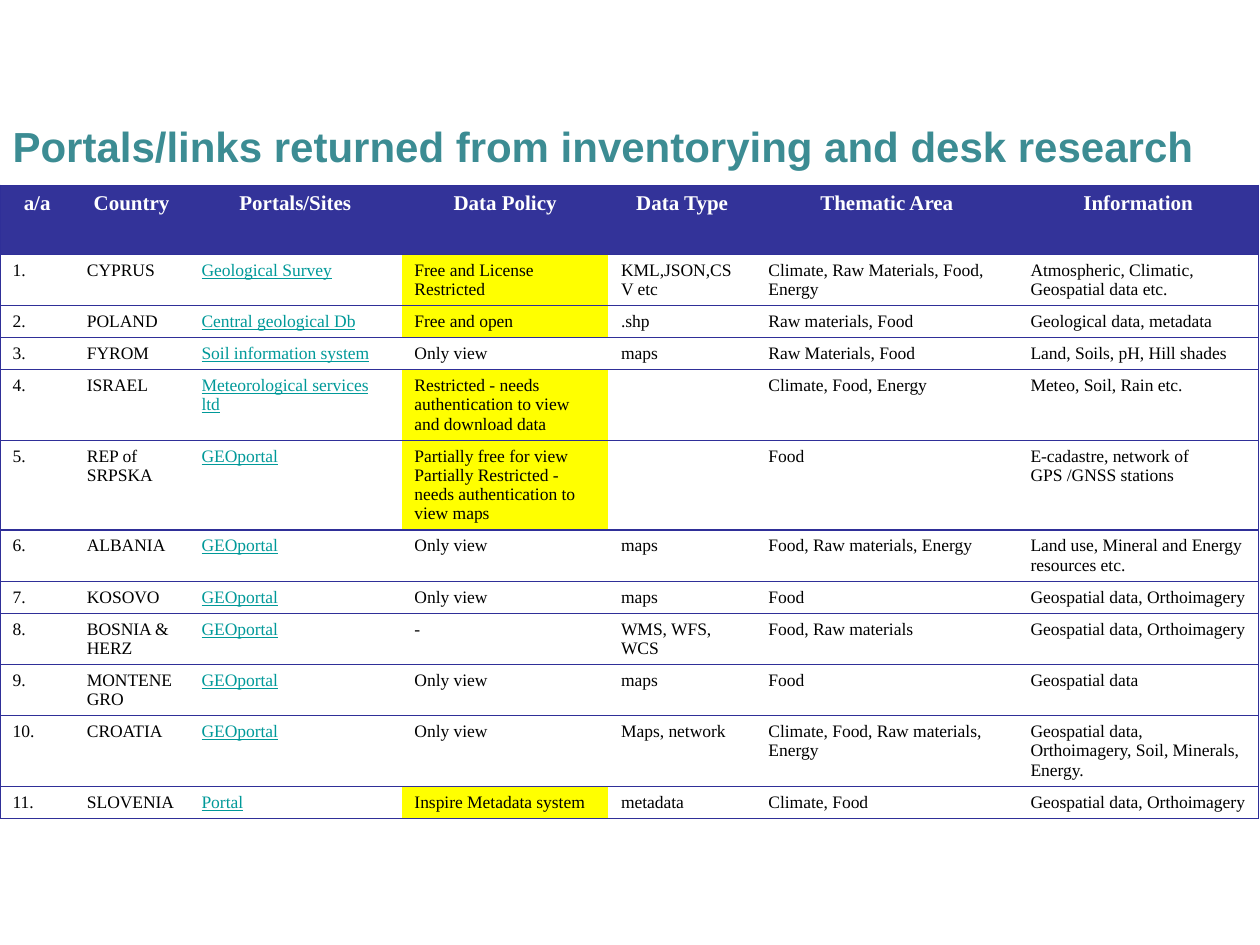
from lxml.etree import SubElement
from pptx import Presentation
from pptx.dml.color import RGBColor
from pptx.enum.text import MSO_ANCHOR as Anchor, MSO_AUTO_SIZE as AutoSize, PP_ALIGN as Align
from pptx.oxml.ns import qn
from pptx.util import Inches, Pt

TITLE = "Portals/links returned from inventorying and desk research"
HEADINGS = ["a/a", "Country", "Portals/Sites", "Data Policy", "Data Type", "Thematic Area", "Information"]
COUNTRIES = [
    ("CYPRUS", "Geological Survey", "Free and License Restricted", "KML,JSON,CSV etc",
     "Climate, Raw Materials, Food, Energy", "Atmospheric, Climatic, Geospatial data etc."),
    ("POLAND", "Central geological Db", "Free and open", ".shp",
     "Raw materials, Food", "Geological data, metadata"),
    ("FYROM", "Soil information system", "Only view", "maps",
     "Raw Materials, Food", "Land, Soils, pH, Hill shades"),
    ("ISRAEL", "Meteorological services ltd",
     "Restricted - needs authentication to view and download data", "",
     "Climate, Food, Energy", "Meteo, Soil, Rain etc."),
    ("REP of SRPSKA", "GEOportal",
     "Partially free for view Partially Restricted - needs authentication to view maps", "",
     "Food", "E-cadastre, network of GPS /GNSS stations"),
    ("ALBANIA", "GEOportal", "Only view", "maps",
     "Food, Raw materials, Energy", "Land use, Mineral and Energy resources etc."),
    ("KOSOVO", "GEOportal", "Only view", "maps", "Food", "Geospatial data, Orthoimagery"),
    ("BOSNIA & HERZ", "GEOportal", "-", "WMS, WFS, WCS",
     "Food, Raw materials", "Geospatial data, Orthoimagery"),
    ("MONTENEGRO", "GEOportal", "Only view", "maps", "Food", "Geospatial data"),
    ("CROATIA", "GEOportal", "Only view", "Maps, network",
     "Climate, Food, Raw materials, Energy", "Geospatial data, Orthoimagery, Soil, Minerals, Energy."),
    ("SLOVENIA", "Portal", "Inspire Metadata system", "metadata",
     "Climate, Food", "Geospatial data, Orthoimagery"),
]
COLUMN_WIDTHS = [0.59, 0.91, 1.69, 1.64, 1.17, 2.08, 1.91]
HEADER_HEIGHT, ROW_HEIGHT = 0.55, 0.22
PORTAL, POLICY = 2, 3
UNMARKED_POLICIES = {"Only view", "-"}
NAVY, RULE, TEAL, LINK = "333399", "2F2F98", "3C8C93", "009999"
YELLOW, WHITE, BLACK = "FFFF00", "FFFFFF", "000000"
PLAIN_STYLE = "{2D5ABB26-0587-4C30-8999-92F81FD0307C}"


def rgb(value):
    """Return the colour for a hex string."""
    return RGBColor.from_string(value)


def write(frame, text, font="Times New Roman", size=10, color=BLACK, bold=False,
          underline=False, align=Align.LEFT):
    """Put one formatted paragraph into a text frame."""
    paragraph = frame.paragraphs[0]
    paragraph.alignment = align
    if not text:
        return
    run = paragraph.add_run()
    run.text = text
    run.font.name, run.font.size = font, Pt(size)
    run.font.bold, run.font.underline = bold, underline
    run.font.color.rgb = rgb(color)


def add_border(cell, side):
    """Draw a thin rule on one side (L, R, T or B) of a cell."""
    line = SubElement(cell._tc.get_or_add_tcPr(), qn(f"a:ln{side}"), w=str(Pt(0.75)))
    SubElement(SubElement(line, qn("a:solidFill")), qn("a:srgbClr"), val=RULE)


def format_cell(cell, text, fill=None, sides="TB", **text_format):
    """Set the text, rules and fill of a table cell."""
    write(cell.text_frame, text, **text_format)
    for side in sides:
        add_border(cell, side)
    if fill:
        cell.fill.solid()
        cell.fill.fore_color.rgb = rgb(fill)
    else:
        cell.fill.background()


def add_title(slide):
    """Place and fill the title placeholder."""
    title = slide.shapes.title
    title.left, title.top, title.width, title.height = map(Inches, (0, 0.76, 10, 0.79))
    frame = title.text_frame
    frame.word_wrap, frame.auto_size = True, AutoSize.NONE
    frame.vertical_anchor = Anchor.MIDDLE
    write(frame, TITLE, font="Arial", size=24, color=TEAL, bold=True)


def add_portal_table(slide):
    """Add the table of portals by country."""
    holder = slide.shapes.add_table(len(COUNTRIES) + 1, len(HEADINGS),
                                    Inches(0), Inches(1.47), Inches(9.98), Inches(5.65))
    table = holder.table
    table.first_row = table.horz_banding = False
    table._tbl.tblPr.find(qn("a:tableStyleId")).text = PLAIN_STYLE
    for column, width in zip(table.columns, COLUMN_WIDTHS):
        column.width = Inches(width)
    for index, row in enumerate(table.rows):
        row.height = Inches(ROW_HEIGHT if index else HEADER_HEIGHT)

    last = len(HEADINGS) - 1
    edges = {0: "LTB", last: "RTB"}
    for col, heading in enumerate(HEADINGS):
        format_cell(table.cell(0, col), heading, fill=NAVY, sides=edges.get(col, "TB"),
                    size=12, color=WHITE, bold=True, align=Align.CENTER)
    for number, country in enumerate(COUNTRIES, 1):
        for col, text in enumerate((f"{number}.", *country)):
            marked = col == POLICY and text not in UNMARKED_POLICIES
            format_cell(table.cell(number, col), text, fill=YELLOW if marked else None,
                        sides=edges.get(col, "TB"), underline=col == PORTAL,
                        color=LINK if col == PORTAL else BLACK)


def main():
    """Build the slide and save it."""
    deck = Presentation()
    deck.slide_width, deck.slide_height = Inches(10), Inches(7.5)
    slide = deck.slides.add_slide(deck.slide_layouts[5])
    add_title(slide)
    add_portal_table(slide)
    deck.save("out.pptx")


if __name__ == "__main__":
    main()
